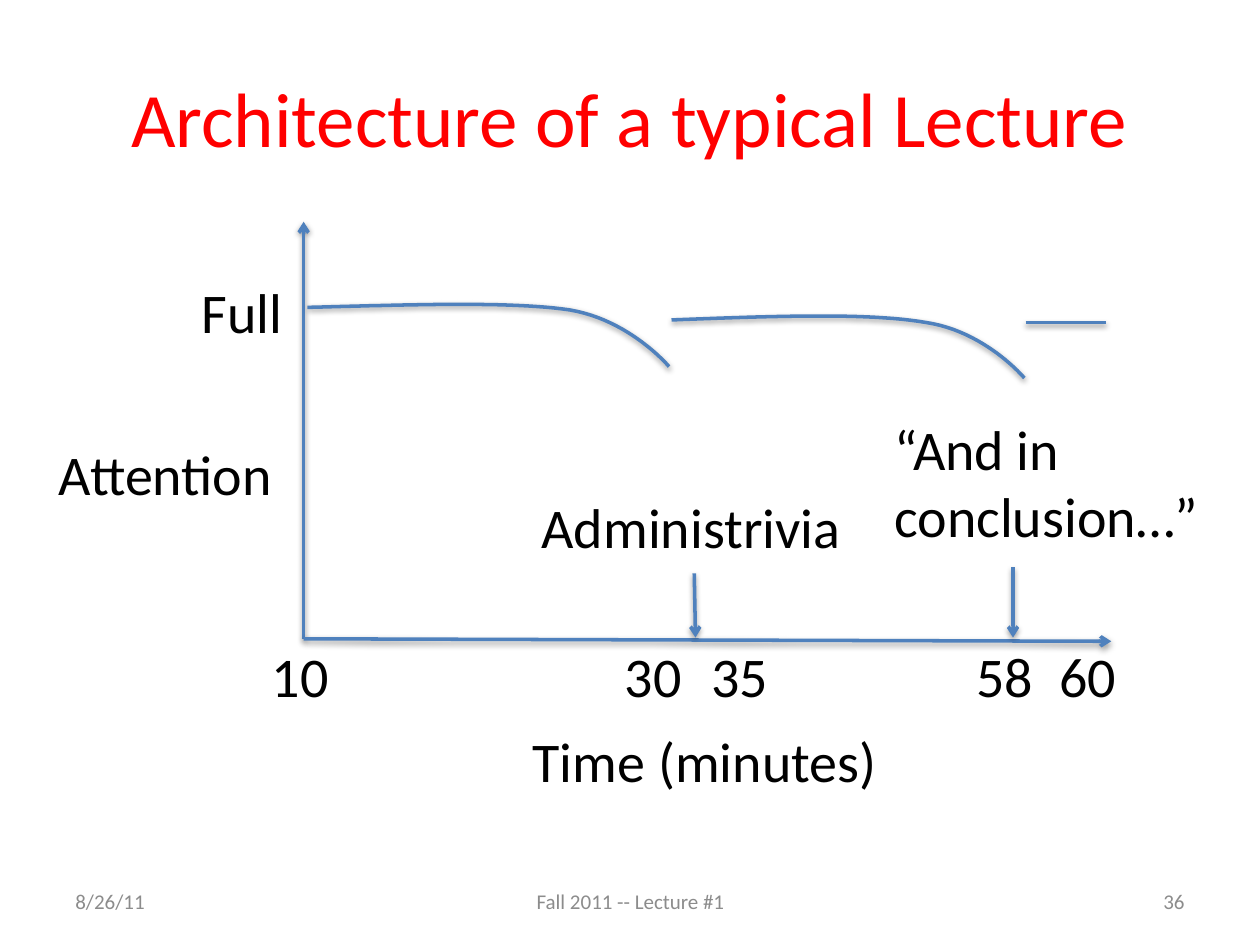
from dataclasses import dataclass
from lxml.etree import SubElement
from pptx import Presentation
from pptx.dml.color import RGBColor
from pptx.enum.shapes import MSO_CONNECTOR
from pptx.enum.text import MSO_ANCHOR, MSO_AUTO_SIZE, PP_ALIGN
from pptx.oxml.ns import qn
from pptx.util import Emu, Pt

SCALE = 9144
FONT = "Calibri"
COLORS = {"title": "FF0000", "text": "000000", "foot": "8C8C8C", "line": "4F81BD", "shade": "000000"}
STEPS = 24


@dataclass(frozen=True)
class Label:
    text: str
    left: int
    top: int
    width: int
    height: int = 64
    size: int = 32
    color: str = "text"
    align: PP_ALIGN = PP_ALIGN.LEFT
    fixed: bool = False


@dataclass(frozen=True)
class Line:
    start: tuple[int, int]
    end: tuple[int, int]
    arrow: bool = True


@dataclass(frozen=True)
class Curve:
    start: tuple[int, int]
    bends: tuple


@dataclass(frozen=True)
class Note:
    label: Label
    line: Line


FRAME = [
    Label("Architecture of a typical Lecture", 50, 30, 900, 125, 44, "title", PP_ALIGN.CENTER, True),
    Label("8/26/11", 50, 695, 233, 40, 12, "foot", PP_ALIGN.LEFT, True),
    Label("Fall 2011 -- Lecture #1", 342, 695, 317, 40, 12, "foot", PP_ALIGN.CENTER, True),
    Label("36", 717, 695, 233, 40, 12, "foot", PP_ALIGN.RIGHT, True),
]
NAMES = [
    Label("Attention", 37, 344, 193),
    Label("Time (minutes)", 413, 572, 296),
    Label("Full", 150, 215, 85),
]
TICKS = [Label(str(time), left, 504, 66)
         for time, left in ((10, 206), (30, 486), (35, 555), (58, 765), (60, 831))]
LINES = [
    Line((241, 507), (241, 176)),
    Line((241, 507), (882, 509)),
    Line((814, 256), (878, 256), False),
]
CURVES = [
    Curve((244, 244), (((324, 242), (404, 239), (452, 246)), ((500, 254), (531, 291), (531, 291)))),
    Curve((533, 254), (((611, 251), (689, 248), (735, 256)), ((782, 263), (813, 300), (813, 300)))),
]
NOTES = [
    Note(Label("Administrivia", 420, 386, 260), Line((551, 455), (552, 506))),
    Note(Label("“And in \vconclusion…”", 700, 324, 264, 118), Line((804, 450), (804, 506))),
]


def px(value: float) -> Emu:
    return Emu(round(value * SCALE))


def rgb(name: str) -> RGBColor:
    return RGBColor.from_string(COLORS[name])


def write(shapes, label: Label) -> None:
    box = shapes.add_textbox(px(label.left), px(label.top), px(label.width), px(label.height))
    frame = box.text_frame
    frame.text = label.text
    frame.word_wrap = label.fixed
    frame.auto_size = MSO_AUTO_SIZE.NONE if label.fixed else MSO_AUTO_SIZE.SHAPE_TO_FIT_TEXT
    frame.vertical_anchor = MSO_ANCHOR.MIDDLE if label.fixed else MSO_ANCHOR.TOP
    for para in frame.paragraphs:
        para.alignment = label.align
        for run in para.runs:
            run.font.name = FONT
            run.font.size = Pt(label.size)
            run.font.color.rgb = rgb(label.color)


def style(shape, arrow: bool = False) -> None:
    shape.line.color.rgb = rgb("line")
    shape.line.width = Pt(2)
    props = shape._element.spPr
    if arrow:
        SubElement(props.find(qn("a:ln")), qn("a:tailEnd"), type="arrow")
    effect = SubElement(props, qn("a:effectLst"))
    shade = SubElement(effect, qn("a:outerShdw"), blurRad="40000", dist="20000",
                       dir="5400000", rotWithShape="0")
    color = SubElement(shade, qn("a:srgbClr"), val=COLORS["shade"])
    SubElement(color, qn("a:alpha"), val="38000")


def draw(shapes, line: Line) -> None:
    ends = [px(value) for value in line.start + line.end]
    style(shapes.add_connector(MSO_CONNECTOR.STRAIGHT, *ends), line.arrow)


def trace(shapes, curve: Curve) -> None:
    points = []
    start = curve.start
    for bend in curve.bends:
        for step in range(1, STEPS + 1):
            t = step / STEPS
            parts = ((1 - t) ** 3, 3 * t * (1 - t) ** 2, 3 * t * t * (1 - t), t ** 3)
            points.append(tuple(px(sum(part * value for part, value in zip(parts, axis)))
                                for axis in zip(start, *bend)))
        start = bend[-1]
    path = shapes.build_freeform(*(px(value) for value in curve.start))
    path.add_line_segments(points, close=False)
    shape = path.convert_to_shape()
    shape.fill.background()
    style(shape)


def main() -> None:
    """Build the slide on how attention runs through a lecture."""
    deck = Presentation()
    deck.slide_width, deck.slide_height = px(1000), px(750)
    shapes = deck.slides.add_slide(deck.slide_layouts[6]).shapes
    for label in FRAME + NAMES + TICKS:
        write(shapes, label)
    for line in LINES:
        draw(shapes, line)
    for curve in CURVES:
        trace(shapes, curve)
    for note in NOTES:
        group = shapes.add_group_shape().shapes
        write(group, note.label)
        draw(group, note.line)
    deck.save("out.pptx")


if __name__ == "__main__":
    main()
